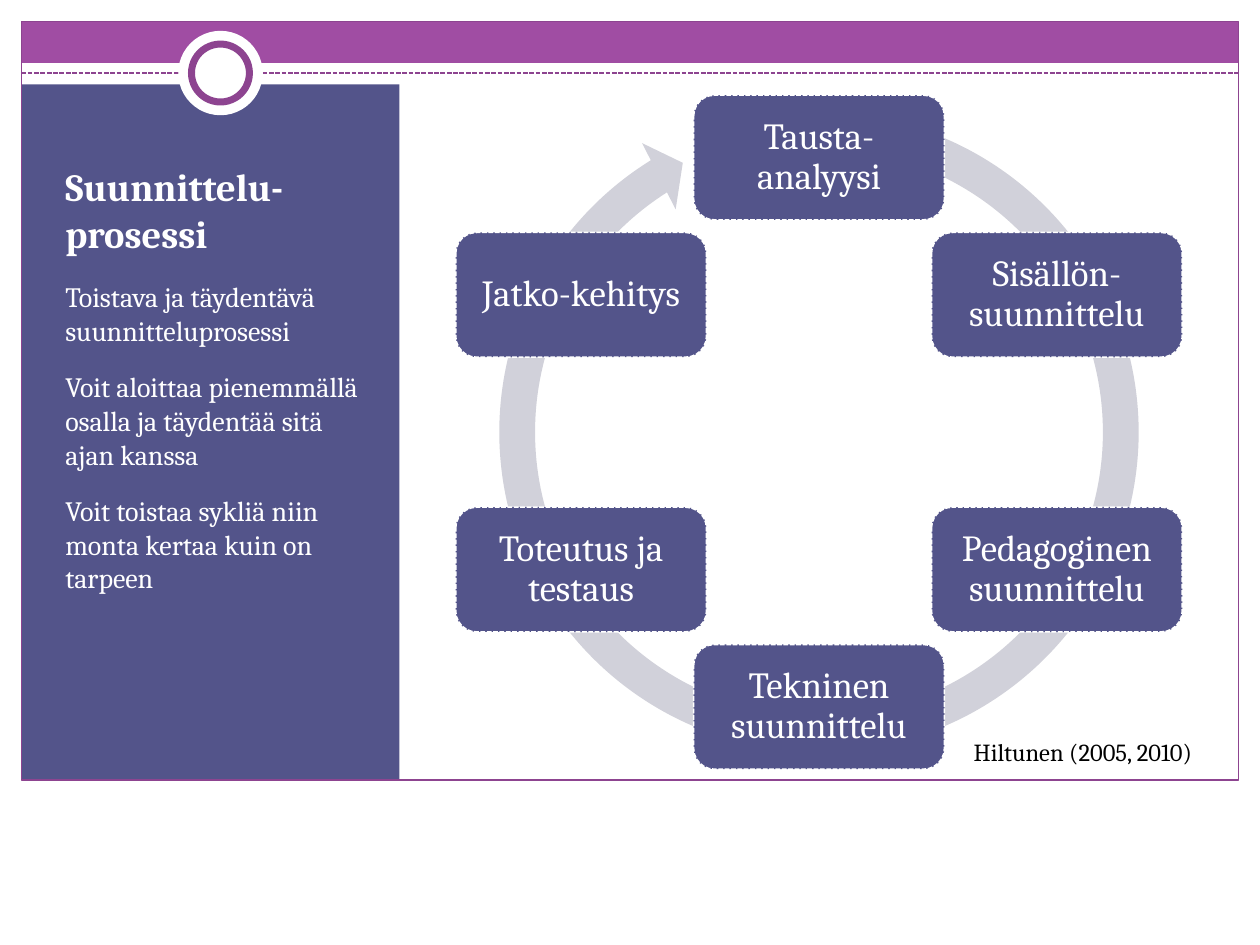
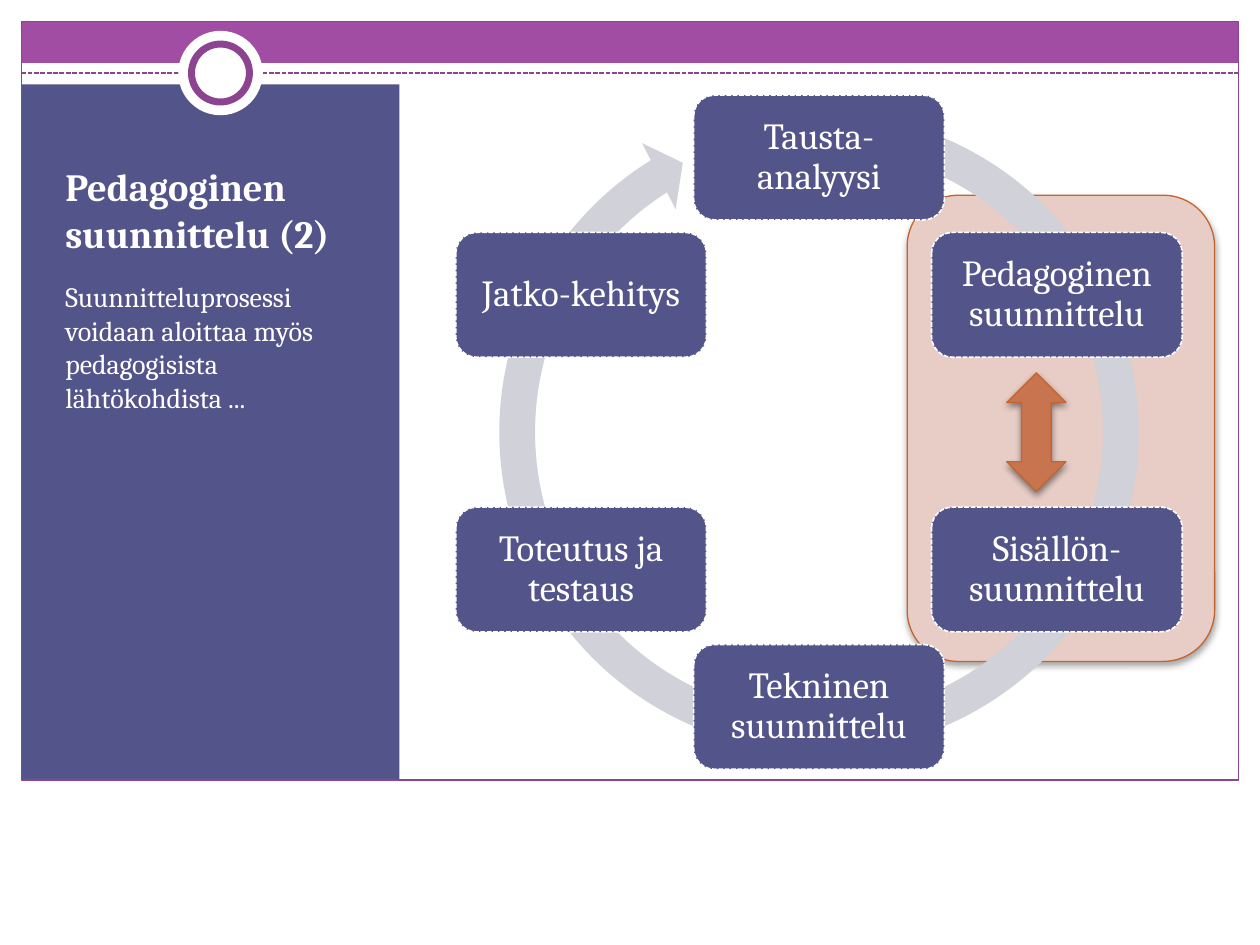
import dataclasses
import math

import lxml.etree
import pptx
import pptx.dml.color
import pptx.enum.dml
import pptx.enum.shapes
import pptx.enum.text
import pptx.oxml.ns
import pptx.util

Inches = pptx.util.Inches
Pt = pptx.util.Pt
SHAPE = pptx.enum.shapes.MSO_SHAPE
ALIGN = pptx.enum.text.PP_ALIGN
ANCHOR = pptx.enum.text.MSO_ANCHOR
qn = pptx.oxml.ns.qn


@dataclasses.dataclass(frozen=True)
class Theme:
    font: str = "Cambria"
    white: str = "FFFFFF"
    black: str = "000000"
    purple: str = "A04DA3"
    plum: str = "8D4490"
    indigo: str = "53548A"
    grey: str = "D1D1DA"
    blush: str = "E7CDC6"
    copper: str = "C8744F"
    rust: str = "C4652D"
    title: int = 22
    step: int = 21
    body: int = 16
    cite: int = 14
    thin: float = 0.75
    dash: float = 0.9
    thick: float = 4


THEME = Theme()

LEFT, TOP, WIDTH, HEIGHT = 0.17, 0.17, 9.66, 6.02
RULE = 0.58
PANEL = 0.67
DISC_X = 1.75
MID_X, MID_Y, RADIUS = 6.5, 3.43, 2.18
STEP_W, STEP_H = 1.99, 0.99
RING = 5.38
RING_SIZE, RING_HEAD = 0.05274, 0.05477
RING_TIP, RING_END, RING_START = 5.21, 237.97, 284.96
DEGREE = 0.6


def color(code):
    return pptx.dml.color.RGBColor.from_string(code)


def apply(target, values):
    for name, value in values.items():
        setattr(target, name, value)


def style_line(line, code, width, dashed=False):
    line.color.rgb = color(code)
    line.width = Pt(width)
    if dashed:
        line.dash_style = pptx.enum.dml.MSO_LINE.SQUARE_DOT


def add_form(slide, kind, box, fill=None, line=None, width=THEME.thin, dashed=False):
    form = slide.shapes.add_shape(kind, *map(Inches, box))
    form.shadow.inherit = False
    if fill:
        form.fill.solid()
        form.fill.fore_color.rgb = color(fill)
    else:
        form.fill.background()
    if line:
        style_line(form.line, line, width, dashed)
    else:
        form.line.fill.background()
    return form


def add_round(slide, kind, mid_x, mid_y, wide, high, **look):
    box = (mid_x - wide / 2, mid_y - high / 2, wide, high)
    return add_form(slide, kind, box, **look)


def cast_shade(form, alpha):
    effects = form.element.spPr.find(qn("a:effectLst"))
    shade = lxml.etree.SubElement(
        effects, qn("a:outerShdw"), blurRad=str(Pt(4)), dist=str(Pt(2)),
        dir=str(90 * 60000), rotWithShape="0")
    tint = lxml.etree.SubElement(shade, qn("a:srgbClr"), val=THEME.black)
    lxml.etree.SubElement(tint, qn("a:alpha"), val=str(alpha * 1000))


def write(frame, lines, size, code, bold=False, layout=None, para=None, before=0):
    apply(frame, {"word_wrap": True, **(layout or {})})
    for index, line in enumerate(lines):
        item = frame.add_paragraph() if index else frame.paragraphs[0]
        item.text = line
        apply(item, para or {})
        if index and before:
            item.space_before = Pt(before)
        apply(item.font, {"name": THEME.font, "size": Pt(size), "bold": bold})
        item.font.color.rgb = color(code)


def add_text(slide, box, lines, size, code, **look):
    label = slide.shapes.add_textbox(*map(Inches, box))
    write(label.text_frame, lines, size, code, **look)


def add_frame(slide):
    add_form(slide, SHAPE.RECTANGLE, (LEFT, TOP, WIDTH, 0.33), THEME.purple)
    add_form(slide, SHAPE.RECTANGLE, (LEFT, PANEL, 3, TOP + HEIGHT - PANEL), THEME.indigo)
    add_form(slide, SHAPE.RECTANGLE, (LEFT, TOP, WIDTH, HEIGHT), line=THEME.plum)
    rule = slide.shapes.add_connector(
        pptx.enum.shapes.MSO_CONNECTOR.STRAIGHT,
        *map(Inches, (LEFT, RULE, LEFT + WIDTH, RULE)))
    style_line(rule.line, THEME.plum, THEME.dash, dashed=True)
    lxml.etree.SubElement(rule._element.spPr, qn("a:effectLst"))
    add_round(slide, SHAPE.OVAL, DISC_X, RULE, 0.67, 0.67, fill=THEME.white)
    add_round(slide, SHAPE.OVAL, DISC_X, RULE, 0.46, 0.46, fill=THEME.white,
              line=THEME.plum, width=THEME.thick)


def add_panel(slide, title, notes):
    add_text(slide, (0.42, 1, 2.58, 1.08), [title], THEME.title, THEME.white,
             bold=True, layout={"vertical_anchor": ANCHOR.BOTTOM})
    add_text(slide, (0.42, 2.17, 2.58, 3.87), notes, THEME.body, THEME.white,
             para={"space_after": Pt(10)}, before=THEME.body * 0.2)


def add_cycle(slide, steps):
    ring = add_round(slide, SHAPE.CIRCULAR_ARROW, MID_X, MID_Y, RING, RING, fill=THEME.grey)
    angles = [angle * DEGREE for angle in (RING_TIP, RING_END, RING_START)]
    for index, value in enumerate([RING_SIZE, *angles, RING_HEAD]):
        ring.adjustments[index] = value
    sides = ("left", "top", "right", "bottom")
    layout = {f"margin_{side}": Inches(0.09) for side in sides}
    layout["vertical_anchor"] = ANCHOR.MIDDLE
    for index, step in enumerate(steps):
        turn = math.tau * index / len(steps)
        form = add_round(
            slide, SHAPE.ROUNDED_RECTANGLE,
            MID_X + RADIUS * math.sin(turn), MID_Y - RADIUS * math.cos(turn),
            STEP_W, STEP_H, fill=THEME.indigo, line=THEME.white,
            width=THEME.dash, dashed=True)
        write(form.text_frame, [step], THEME.step, THEME.white, layout=layout,
              para={"alignment": ALIGN.CENTER, "line_spacing": 0.9})


def start_slide(deck):
    slide = deck.slides.add_slide(deck.slide_layouts[6])
    add_frame(slide)
    return slide


def add_process(deck, steps):
    slide = start_slide(deck)
    add_panel(slide, "Suunnittelu-prosessi", [
        "Toistava ja täydentävä suunnitteluprosessi",
        "Voit aloittaa pienemmällä osalla ja täydentää sitä ajan kanssa",
        "Voit toistaa sykliä niin monta kertaa kuin on tarpeen",
    ])
    add_cycle(slide, steps)
    add_text(slide, (7.63, 5.8, 2.17, 0.57), ["Hiltunen (2005, 2010)"],
             THEME.cite, THEME.black)


def add_swap(deck, steps):
    slide = start_slide(deck)
    focus = add_form(slide, SHAPE.ROUNDED_RECTANGLE, (7.2, 1.55, 2.44, 3.7),
                     THEME.blush, THEME.rust)
    cast_shade(focus, 35)
    add_panel(slide, "Pedagoginen suunnittelu (2)", [
        "Suunnitteluprosessi voidaan aloittaa myös pedagogisista lähtökohdista ...",
    ])
    first, second, third, *rest = steps
    add_cycle(slide, [first, third, second, *rest])
    arrow = add_form(slide, SHAPE.UP_DOWN_ARROW, (7.99, 2.96, 0.47, 0.94),
                     THEME.copper, THEME.rust)
    cast_shade(arrow, 45)


def main():
    deck = pptx.Presentation()
    apply(deck, {"slide_width": Inches(10), "slide_height": Inches(7.5)})
    steps = ["Tausta-analyysi", "Sisällön-suunnittelu", "Pedagoginen suunnittelu",
             "Tekninen suunnittelu", "Toteutus ja testaus", "Jatko-kehitys"]
    add_process(deck, steps)
    add_swap(deck, steps)
    deck.save("out.pptx")


if __name__ == "__main__":
    main()
